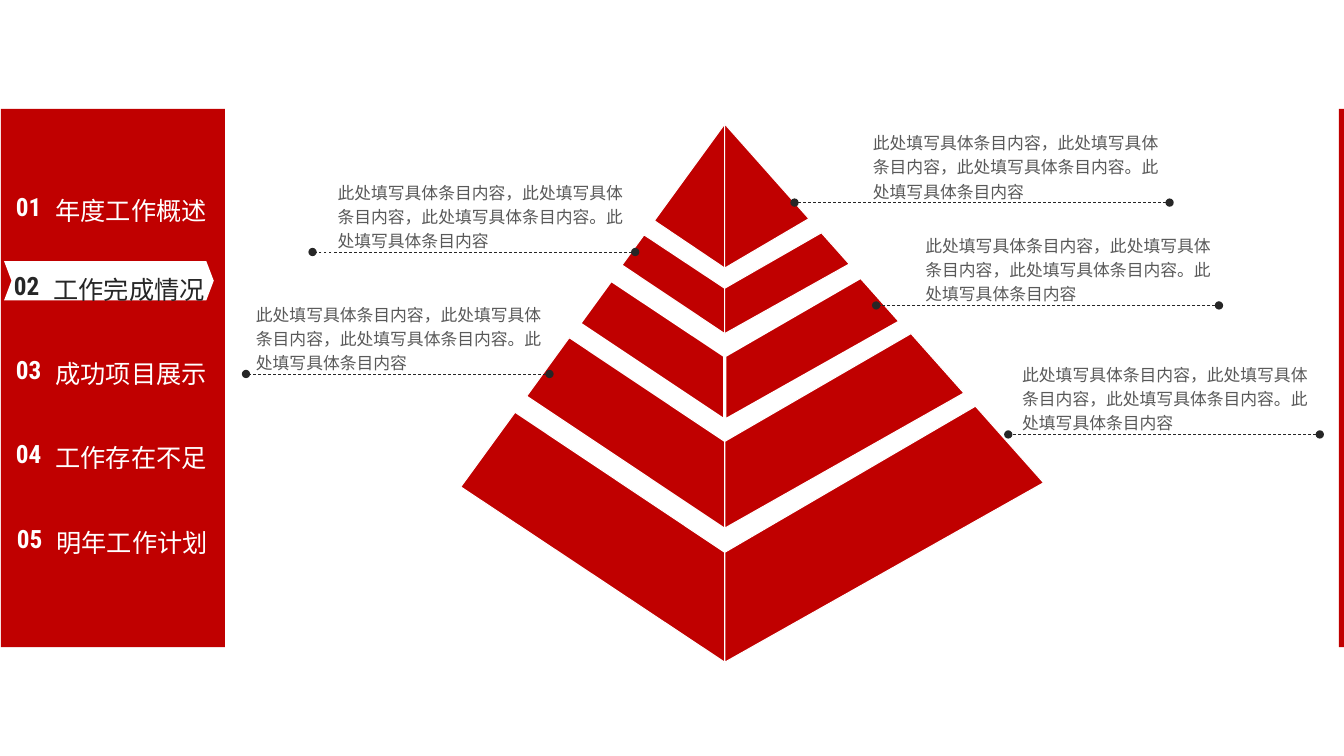
"""Builds a work report slide: a section menu beside a five-layer pyramid with callouts."""
from lxml import etree
from pptx import Presentation
from pptx.dml.color import RGBColor
from pptx.enum.dml import MSO_LINE
from pptx.enum.shapes import MSO_CONNECTOR, MSO_SHAPE
from pptx.enum.text import MSO_AUTO_SIZE, PP_ALIGN
from pptx.oxml.ns import qn
from pptx.util import Inches, Pt

RECT, CHEVRON = MSO_SHAPE.RECTANGLE, MSO_SHAPE.CHEVRON
STRAIGHT, DASH = MSO_CONNECTOR.STRAIGHT, MSO_LINE.DASH
LEFT, CENTER = PP_ALIGN.LEFT, PP_ALIGN.CENTER
GROW = MSO_AUTO_SIZE.SHAPE_TO_FIT_TEXT
COLORS = {"red": "C00000", "white": "FFFFFF", "dark": "262626", "gray": "595959"}

SECTIONS = [
    ("01", "年度工作概述", 0.05, 0.77),
    ("02", "工作完成情况", 0.03, 1.55),
    ("03", "成功项目展示", 0.05, 2.39),
    ("04", "工作存在不足", 0.05, 3.22),
    ("05", "明年工作计划", 0.06, 4.06),
]
CURRENT = "02"

# Heights below the apex: centre top and bottom, left top and bottom, right top and bottom.
LAYERS = [
    ((0, 1.43), (0, 0.96), (0, 0.94), 0.75),
    ((1.63, 2.08), (1.1, 1.4), (1.08, 1.39), 0.75),
    ((2.3, 2.94), (1.55, 1.98), (1.52, 1.96), 2.25),
    ((3.15, 4.01), (2.12, 2.7), (2.08, 2.67), 0.75),
    ((4.25, 5.34), (2.86, 3.6), (2.8, 3.56), 0.75),
]

CALLOUT = "此处填写具体条目内容，此处填写具体条目内容，此处填写具体条目内容。此处填写具体条目内容"
CALLOUTS = [
    (7.88, 11.6, 2.01, 8.56),
    (3.1, 6.3, 2.5, 3.25),
    (8.69, 12.09, 3.03, 9.08),
    (2.44, 5.45, 3.71, 2.44),
    (10, 13.09, 4.31, 10.04),
]


def rgb(name):
    """Return the named colour."""
    return RGBColor.from_string(COLORS[name])


def add_text(s, text, x, y, w, h, size=12, font="Calibri", color="gray",
             bold=False, align=LEFT, spacing=1.0):
    """Add a wrapped text box with one formatted paragraph."""
    tf = s.shapes.add_textbox(Inches(x), Inches(y), Inches(w), Inches(h)).text_frame
    tf.word_wrap = True
    tf.auto_size = GROW
    p = tf.paragraphs[0]
    p.alignment = align
    p.line_spacing = spacing
    r = p.add_run()
    r.text = text
    r.font.size = Pt(size)
    r.font.name = font
    r.font.bold = bold
    r.font.color.rgb = rgb(color)


def add_block(s, kind, x, y, w, h, color):
    """Add a flat preset shape without outline."""
    sp = s.shapes.add_shape(kind, Inches(x), Inches(y), Inches(w), Inches(h))
    sp.shadow.inherit = False
    sp.fill.solid()
    sp.fill.fore_color.rgb = rgb(color)
    sp.line.fill.background()
    return sp


def add_menu(s, x, y, w, h):
    """Add the section menu with the current section marked."""
    add_block(s, RECT, x, y, w, h, "red")
    marker = add_block(s, CHEVRON, x + 0.03, y + 1.51, 2.08, 0.39, "white")
    marker.adjustments[0] = 0.189
    for number, label, dx, dy in SECTIONS:
        color = "dark" if number == CURRENT else "white"
        add_text(s, number, x + dx, y + dy, 0.56, 0.4, size=18,
                 font="Roboto Condensed", color=color, bold=True)
        add_text(s, label, x + dx + 0.22, y + dy - 0.11, 2.04, 0.5, size=18,
                 font="Open Sans", color=color, align=CENTER, spacing=1.5)


def add_face(grp, points, width):
    """Add one red face of a pyramid layer."""
    start, *rest = [(Inches(x), Inches(y)) for x, y in points]
    builder = grp.shapes.build_freeform(*start)
    builder.add_line_segments(rest, close=True)
    sp = builder.convert_to_shape()
    sp.shadow.inherit = False
    sp.fill.solid()
    sp.fill.fore_color.rgb = rgb("red")
    sp.line.color.rgb = rgb("white")
    sp.line.width = Pt(width)


def add_pyramid(s, x, y, w, h):
    """Add the layers, with outer corners along two straight slopes from the apex."""
    apex = x + 0.453 * w
    left_slope = (x - apex) / LAYERS[-1][1][1]
    right_slope = (x + w - apex) / LAYERS[-1][2][1]
    scale = h / LAYERS[-1][0][1]
    for (top, bottom), left, right, width in LAYERS:
        grp = s.shapes.add_group_shape()
        for slope, (outer_top, outer_bottom) in ((left_slope, left), (right_slope, right)):
            corners = [(0, top), (0, bottom), (slope * outer_bottom, outer_bottom)]
            if outer_top:
                corners.append((slope * outer_top, outer_top))
            add_face(grp, [(apex + dx, y + dy * scale) for dx, dy in corners], width)


def add_callout(s, x1, x2, y, text_x):
    """Add a note above a dashed rule with round ends."""
    cx = s.shapes.add_connector(STRAIGHT, Inches(x2), Inches(y), Inches(x1), Inches(y))
    cx.line.color.rgb = rgb("dark")
    cx.line.width = Pt(0.5)
    cx.line.dash_style = DASH
    ln = cx.line._get_or_add_ln()
    for end in ("a:headEnd", "a:tailEnd"):
        etree.SubElement(ln, qn(end), type="oval")
    etree.SubElement(cx._element.spPr, qn("a:effectLst"))
    add_text(s, CALLOUT, text_x, y - 0.78, 3.1, 0.83, spacing=1.2)


def main():
    """Build and save the slide."""
    prs = Presentation()
    prs.slide_width, prs.slide_height = Inches(13.33), Inches(7.5)
    s = prs.slides.add_slide(prs.slide_layouts[6])
    add_menu(s, 0.01, 1.08, 2.22, 5.34)
    add_pyramid(s, 4.57, 1.23, 5.78, 5.34)
    for callout in CALLOUTS:
        add_callout(s, *callout)
    add_block(s, RECT, 13.28, 1.08, 0.05, 5.34, "red")
    prs.save("out.pptx")


if __name__ == "__main__":
    main()
